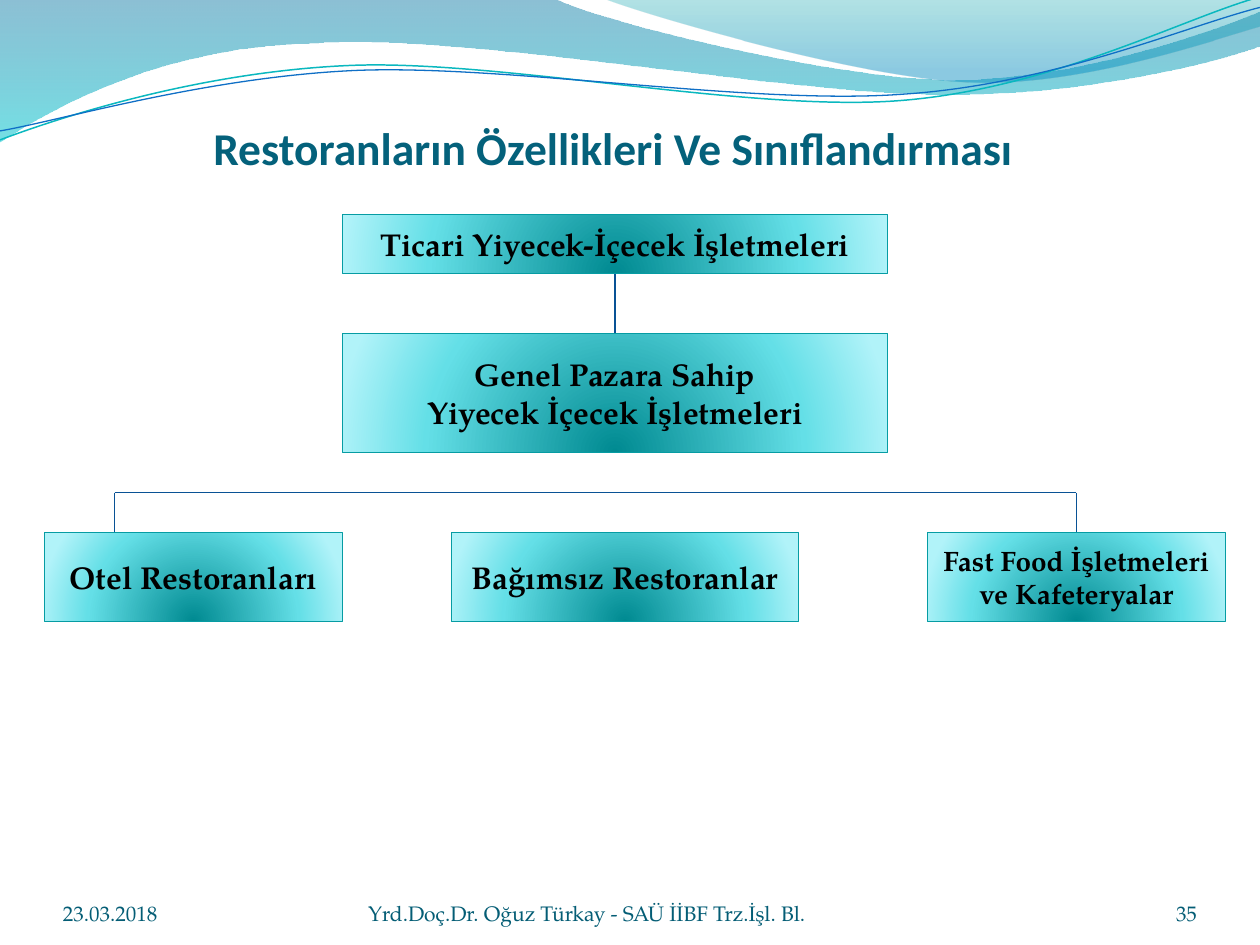
import math

from lxml import etree
from pptx import Presentation
from pptx.dml.color import RGBColor
from pptx.enum.shapes import MSO_CONNECTOR, MSO_SHAPE
from pptx.enum.text import MSO_ANCHOR, PP_ALIGN
from pptx.oxml import parse_xml
from pptx.oxml.ns import qn
from pptx.util import Cm, Pt

STRAIGHT = MSO_CONNECTOR.STRAIGHT
RECT = MSO_SHAPE.RECTANGLE
MIDDLE, BOTTOM = MSO_ANCHOR.MIDDLE, MSO_ANCHOR.BOTTOM
LEFT, CENTER, RIGHT, JUSTIFY = (PP_ALIGN.LEFT, PP_ALIGN.CENTER,
                                PP_ALIGN.RIGHT, PP_ALIGN.JUSTIFY)
A_NS = "http://schemas.openxmlformats.org/drawingml/2006/main"
SERIF = "TeX Gyre Pagella"
WAVE_TILT = -2.7

LINEAR = '<a:lin ang="5400000" scaled="0"/>'
RADIAL = ('<a:path path="circle"><a:fillToRect l="50000" t="130000" '
          'r="50000" b="-30000"/></a:path>')
BOX_STOPS = [(0, "008A91", 100), (68, "64DFE7", 100), (100, "B1F3F9", 100)]

# Bands and waves: a start point, then curves (three points) or lines (one), in cm
BANDS = [
    ([[(0, 0)], [(11.18, -0.03)],
      [(12.09, 0.43), (16.87, 1.6), (19.25, 1.6)],
      [(21.67, 1.6), (24.33, 0.66), (25.4, 0.23)],
      [(25.43, 0.91)],
      [(24.97, 1.12), (22.1, 1.93), (18.95, 1.9)],
      [(15.8, 1.9), (9.7, 0.71), (6.53, 0.86)],
      [(3.28, 0.91), (1.17, 2.11), (-0.03, 2.87)],
      [(0, 0)]],
     [(0, "0074A1", 45), (100, "00C6CF", 55)]),
    ([[(12.17, -0.03)],
      [(12.93, 0.28), (17.32, 1.57), (19.53, 1.65)],
      [(21.74, 1.75), (24.41, 0.81), (25.4, 0.53)],
      [(25.4, 0)], [(12.17, -0.03)]],
     [(0, "00A1A9", 30), (80, "008BBF", 45)]),
]
# The last entry of a wave is the centre it is tilted about
WAVES = [
    ([[(0, 2.82)],
      [(1.22, 2.36), (4.01, 1.45), (7.04, 1.32)],
      [(10.03, 1.19), (15.06, 2.26), (18.11, 2.03)],
      [(21.16, 1.8), (23.83, 0.38), (25.35, -0.05)]],
     "0AB8BF", 0.85, (12.67, 1.46)),
    ([[(0, 2.64)],
      [(1.19, 2.44), (4.17, 1.55), (7.19, 1.42)],
      [(10.24, 1.3), (15.16, 2.13), (18.21, 1.9)],
      [(21.23, 1.7), (23.9, 0.53), (25.4, 0.15)]],
     "0F6FC6", 0.75, (12.69, 1.5)),
]


def rgb(value):
    return RGBColor.from_string(value)


def set_gradient(shape, stops, direction):
    """Fill with (position %, colour, opacity %) stops."""
    stop_xml = "".join(
        f'<a:gs pos="{pos * 1000}"><a:srgbClr val="{color}">'
        f'<a:alpha val="{alpha * 1000}"/></a:srgbClr></a:gs>'
        for pos, color, alpha in stops)
    gradient = parse_xml(
        f'<a:gradFill xmlns:a="{A_NS}" rotWithShape="1">'
        f'<a:gsLst>{stop_xml}</a:gsLst>{direction}</a:gradFill>')
    shape.fill.background()
    sp_pr = shape._element.spPr
    sp_pr.replace(sp_pr.find(qn("a:noFill")), gradient)


def turn(point, center, degrees):
    angle = math.radians(degrees)
    dx, dy = point[0] - center[0], point[1] - center[1]
    return (center[0] + dx * math.cos(angle) - dy * math.sin(angle),
            center[1] + dx * math.sin(angle) + dy * math.cos(angle))


def add_outline(s, segments, left, top, close, tilt=0, center=(0, 0)):
    """Draw lines and cubic curves; a tilt is kept as the shape's rotation."""
    points = [turn(point, center, -tilt) for seg in segments for point in seg]
    points = [(Cm(left + x), Cm(top + y)) for x, y in points]
    builder = s.shapes.build_freeform(*points[0])
    builder.add_line_segments(points[1:], close=close)
    sp = builder.convert_to_shape()
    sp.shadow.inherit = False
    sp.rotation = tilt

    steps = iter(list(sp._element.iter(qn("a:lnTo"))))
    for segment in segments[1:]:
        first = next(steps)
        if len(segment) == 3:
            first.tag = qn("a:cubicBezTo")
            for _ in range(2):
                step = next(steps)
                first.append(step[0])
                step.getparent().remove(step)
    return sp


def add_header(s, left, top):
    for segments, stops in BANDS:
        sp = add_outline(s, segments, left, top, close=True)
        set_gradient(sp, stops, LINEAR)
        sp.line.fill.background()
    for segments, color, width, center in WAVES:
        sp = add_outline(s, segments, left, top, False, WAVE_TILT, center)
        sp.fill.background()
        sp.line.color.rgb = rgb(color)
        sp.line.width = Pt(width)


def write(tf, text, size, color, align, font=SERIF, bold=False):
    tf.word_wrap = True
    tf.text = text
    for p in tf.paragraphs:
        p.alignment = align
        p.font.name, p.font.size, p.font.bold = font, Pt(size), bold
        p.font.color.rgb = rgb(color)


def add_label(s, box, text, size, color, align, **style):
    tf = s.shapes.add_textbox(*map(Cm, box)).text_frame
    tf.margin_left = tf.margin_right = tf.margin_top = tf.margin_bottom = 0
    tf.vertical_anchor = BOTTOM
    write(tf, text, size, color, align, **style)


def add_node(s, box, text, size=18):
    sp = s.shapes.add_shape(RECT, *map(Cm, box))
    sp.shadow.inherit = False
    set_gradient(sp, BOX_STOPS, RADIAL)
    sp.line.color.rgb = rgb("069CA3")
    sp.line.width = Pt(0.75)
    sp.text_frame.vertical_anchor = MIDDLE
    write(sp.text_frame, text, size, "000000", CENTER, bold=True)
    return sp


def add_line(s, x1, y1, x2, y2):
    line = s.shapes.add_connector(STRAIGHT, *map(Cm, (x1, y1, x2, y2)))
    line.line.color.rgb = rgb("095295")
    line.line.width = Pt(0.75)
    etree.SubElement(line._element.spPr, qn("a:effectLst"))
    return line


def add_tree(s, left, top):
    """Two stacked boxes above a row of three, joined by lines."""
    upper_x, upper_w, root_h = left + 6, 11, 1.2
    middle_x = upper_x + upper_w / 2
    genre_y, bus_y, row_y, row_h = top + 2.4, top + 5.61, top + 6.41, 1.8
    side_w, right_x = 6, left + 17.8

    root = add_node(s, (upper_x, top, upper_w, root_h),
                    "Ticari Yiyecek-İçecek İşletmeleri")
    genre = add_node(s, (upper_x, genre_y, upper_w, 2.4),
                     "Genel Pazara Sahip\nYiyecek İçecek İşletmeleri")
    add_node(s, (left, row_y, side_w, row_h), "Otel Restoranları")
    add_node(s, (left + 8.2, row_y, 7, row_h), "Bağımsız Restoranlar")
    fast_food = add_node(s, (right_x, row_y, side_w, row_h),
                         "Fast Food İşletmeleri ve Kafeteryalar", 16)

    stem = add_line(s, middle_x, top + root_h, middle_x, genre_y)
    stem.begin_connect(root, 2)
    stem.end_connect(genre, 0)
    bus_left, bus_right = left + 1.41, right_x + side_w / 2
    add_line(s, bus_left, bus_y, bus_right, bus_y)
    add_line(s, bus_left, bus_y, bus_left, row_y)
    add_line(s, bus_right, bus_y, bus_right, row_y).end_connect(fast_food, 0)


def add_footer(s, left, top):
    for x, width, text, align in (
            (0, 5.92, "23.03.2018", LEFT),
            (20.75, 2.11, "35", RIGHT),
            (6.15, 9.32, "Yrd.Doç.Dr. Oğuz Türkay - SAÜ İİBF Trz.İşl. Bl.", LEFT)):
        add_label(s, (left + x, top, width, 1.02), text, 12, "045D75", align)


def main():
    prs = Presentation()
    prs.slide_width, prs.slide_height = Cm(25.4), Cm(19.05)
    s = prs.slides.add_slide(prs.slide_layouts[6])
    add_header(s, 0, 0)
    add_label(s, (4.3, 1.73, 22.86, 1.8),
              "Restoranların Özellikleri Ve Sınıflandırması",
              26, "04617B", JUSTIFY, font="Calibri", bold=True)
    add_tree(s, 0.9, 4.32)
    add_footer(s, 1.27, 17.65)
    prs.save("out.pptx")


if __name__ == "__main__":
    main()
